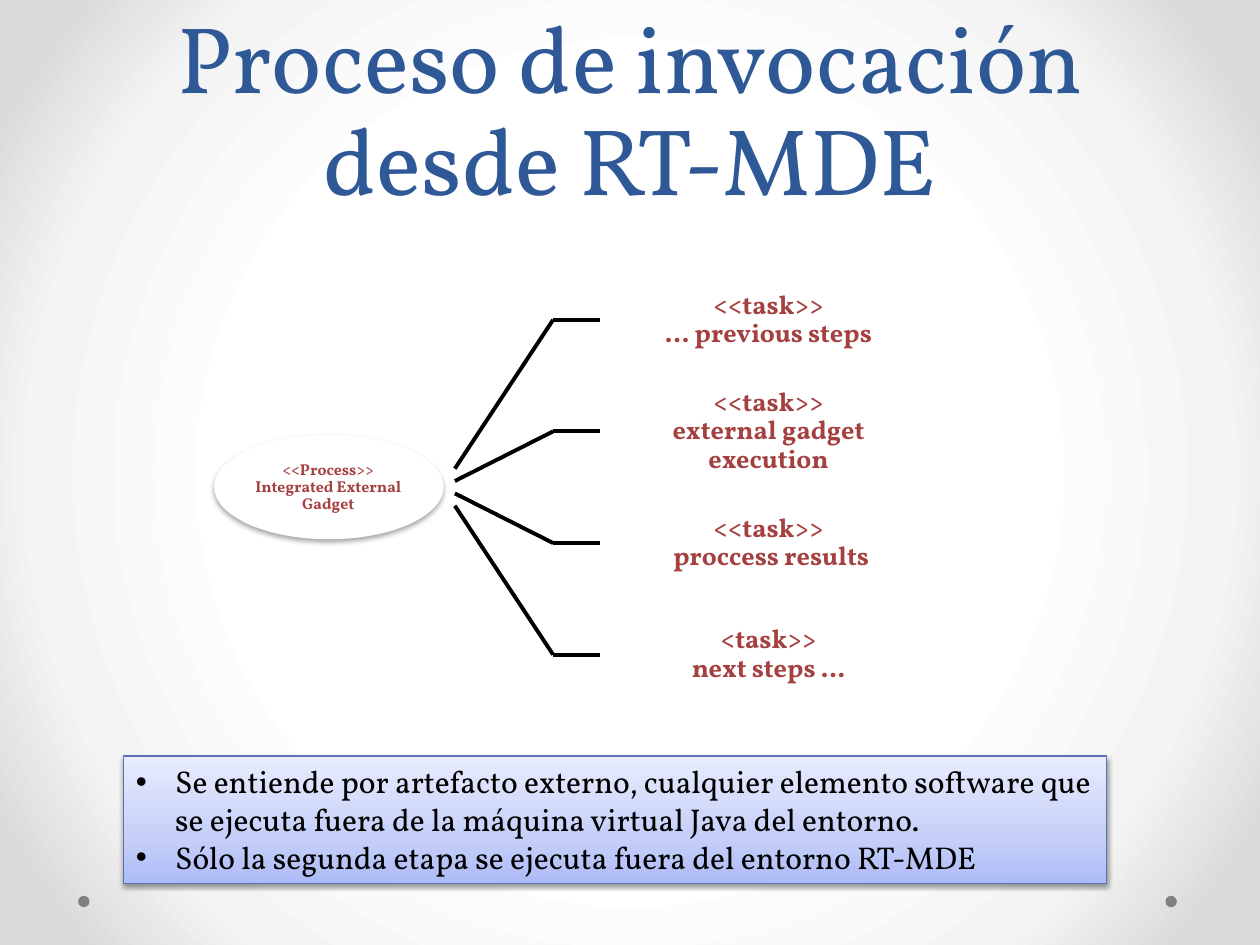
from dataclasses import dataclass

import lxml.etree
import pptx
import pptx.dml.color
import pptx.enum.shapes
import pptx.enum.text
import pptx.oxml
import pptx.oxml.ns
import pptx.util

FONT = "Vollkorn"
RED = "A54040"
BLACK = "000000"
COLUMNS, ROWS = 100, 75
Shapes = pptx.enum.shapes.MSO_SHAPE
Align = pptx.enum.text.PP_ALIGN
Anchor = pptx.enum.text.MSO_ANCHOR
qn = pptx.oxml.ns.qn

presentation = pptx.Presentation()
presentation.slide_width = pptx.util.Inches(10)
presentation.slide_height = pptx.util.Inches(7.5)
slide = presentation.slides.add_slide(presentation.slide_layouts[6])


@dataclass(frozen=True)
class Box:
    column: float
    row: float
    columns: float
    rows: float

    def place(self) -> tuple[int, int, int, int]:
        return (across(self.column), down(self.row),
                across(self.columns), down(self.rows))


@dataclass(frozen=True)
class TextStyle:
    size: float
    color: str
    bold: bool = False
    align: Align = Align.CENTER
    spacing: object = None


def across(columns: float) -> int:
    return round(presentation.slide_width * columns / COLUMNS)


def down(rows: float) -> int:
    return round(presentation.slide_height * rows / ROWS)


def rgb(color: str) -> pptx.dml.color.RGBColor:
    return pptx.dml.color.RGBColor.from_string(color)


def add_child(parent, tag: str, **attributes):
    return lxml.etree.SubElement(
        parent, qn(tag), {name: str(value) for name, value in attributes.items()})


def set_gradient(fill, owner, stops: list[tuple[int, str]], angle: int | None) -> None:
    fill.gradient()
    gradient = owner.find(".//" + qn("a:gradFill"))
    for child in list(gradient):
        gradient.remove(child)
    stop_list = add_child(gradient, "a:gsLst")
    for position, color in stops:
        stop = add_child(stop_list, "a:gs", pos=position * 1000)
        add_child(stop, "a:srgbClr", val=color)
    if angle is None:
        center = add_child(gradient, "a:path", path="circle")
        add_child(center, "a:fillToRect", l=50000, t=50000, r=50000, b=50000)
    else:
        add_child(gradient, "a:lin", ang=angle * 60000, scaled=0)


def add_shadow(shape, opacity: int, distance: float) -> None:
    effects = shape._element.spPr.find(qn("a:effectLst"))
    shadow = add_child(effects, "a:outerShdw", blurRad=pptx.util.Pt(3.1),
                       dist=pptx.util.Pt(distance), dir=90 * 60000, rotWithShape=0)
    color = add_child(shadow, "a:srgbClr", val=BLACK)
    add_child(color, "a:alpha", val=opacity * 1000)


def add_filled_shape(kind: Shapes, box: Box, color: str):
    shape = slide.shapes.add_shape(kind, *box.place())
    shape.shadow.inherit = False
    shape.fill.solid()
    shape.fill.fore_color.rgb = rgb(color)
    shape.line.fill.background()
    return shape


def write_lines(paragraph, lines: list[str], style: TextStyle) -> None:
    paragraph.alignment = style.align
    if style.spacing is not None:
        paragraph.line_spacing = style.spacing
    for index, line in enumerate(lines):
        if index:
            paragraph.add_line_break()
        run = paragraph.add_run()
        run.text = line
        run.font.name = FONT
        run.font.size = pptx.util.Pt(style.size)
        run.font.bold = style.bold
        run.font.color.rgb = rgb(style.color)


def add_text(box: Box, lines: list[str], style: TextStyle,
             inset: float | None = None, anchor: Anchor = Anchor.MIDDLE) -> None:
    frame = slide.shapes.add_textbox(*box.place()).text_frame
    frame.word_wrap = True
    frame.vertical_anchor = anchor
    if inset is not None:
        frame.margin_left = frame.margin_right = across(inset)
        frame.margin_top = frame.margin_bottom = down(inset)
    write_lines(frame.paragraphs[0], lines, style)


def add_line(start: tuple[float, float], end: tuple[float, float]) -> None:
    connector = slide.shapes.add_connector(
        pptx.enum.shapes.MSO_CONNECTOR.STRAIGHT,
        across(start[0]), down(start[1]), across(end[0]), down(end[1]))
    connector.line.color.rgb = rgb(BLACK)
    connector.line.width = pptx.util.Pt(2.25)
    add_child(connector._element.spPr, "a:effectLst")


def add_bullet(paragraph, text: str) -> None:
    write_lines(paragraph, [text], TextStyle(18, BLACK, align=Align.LEFT))
    properties = paragraph._p.get_or_add_pPr()
    properties.set("marL", str(across(3.125)))
    properties.set("indent", str(-across(3.125)))
    add_child(properties, "a:buFont", typeface="Arial")
    add_child(properties, "a:buChar", char="•")


def add_process_tree() -> None:
    ellipse = add_filled_shape(Shapes.OVAL, Box(17, 34.5, 18.2, 8.3), "FFFFFF")
    add_shadow(ellipse, 35, 1.8)
    add_text(Box(19.6, 35.7, 12.9, 5.9), ["<<Process>>", "Integrated External Gadget"],
             TextStyle(9, RED, True, spacing=0.9), inset=0)
    tasks = [
        ["<<task>>", "... previous steps"],
        ["<<task>>", "external gadget execution"],
        ["<<task>>", " proccess results"],
        ["<task>>", "next steps ..."],
    ]
    center, pitch, start_pitch, height = 38.67, 8.86, 0.98, 8.8
    for index, lines in enumerate(tasks):
        offset = index - (len(tasks) - 1) / 2
        row = center + offset * pitch
        add_line((36.1, center + offset * start_pitch), (43.9, row))
        add_line((43.9, row), (47.6, row))
        add_text(Box(47.6, row - height / 2, 26.8, height), lines,
                 TextStyle(15, RED, True, spacing=0.9), inset=1.2)


def add_notes_panel() -> None:
    panel = add_filled_shape(Shapes.RECTANGLE, Box(9.8, 60, 78, 10.1), "FFFFFF")
    set_gradient(panel.fill, panel._element,
                 [(0, "ADBBF6"), (35, "C5CFF8"), (100, "E8ECFD")], 270)
    panel.line.color.rgb = rgb("5C72B2")
    panel.line.width = pptx.util.Pt(0.75)
    add_shadow(panel, 38, 1.6)
    frame = panel.text_frame
    frame.word_wrap = True
    frame.vertical_anchor = Anchor.TOP
    add_bullet(frame.paragraphs[0],
               "Se entiende por artefacto externo, cualquier elemento software "
               "que se ejecuta fuera de la máquina virtual Java del entorno.")
    add_bullet(frame.add_paragraph(),
               "Sólo la segunda etapa se ejecuta fuera del entorno RT-MDE")


def main() -> None:
    set_gradient(slide.background.fill, slide._element,
                 [(50, "FFFFFF"), (76, "F4F4F4"), (92, "DADADA")], None)
    for column in (92.5, 6.2):
        add_filled_shape(Shapes.OVAL, Box(column, 71.1, 0.9, 0.9), "808080")
    add_text(Box(5, 0, 90, 17.5), ["Proceso de invocación desde RT-MDE"],
             TextStyle(54, "2F5897", spacing=pptx.util.Pt(58)), anchor=Anchor.BOTTOM)
    add_process_tree()
    add_notes_panel()
    presentation.save("out.pptx")


if __name__ == "__main__":
    main()
